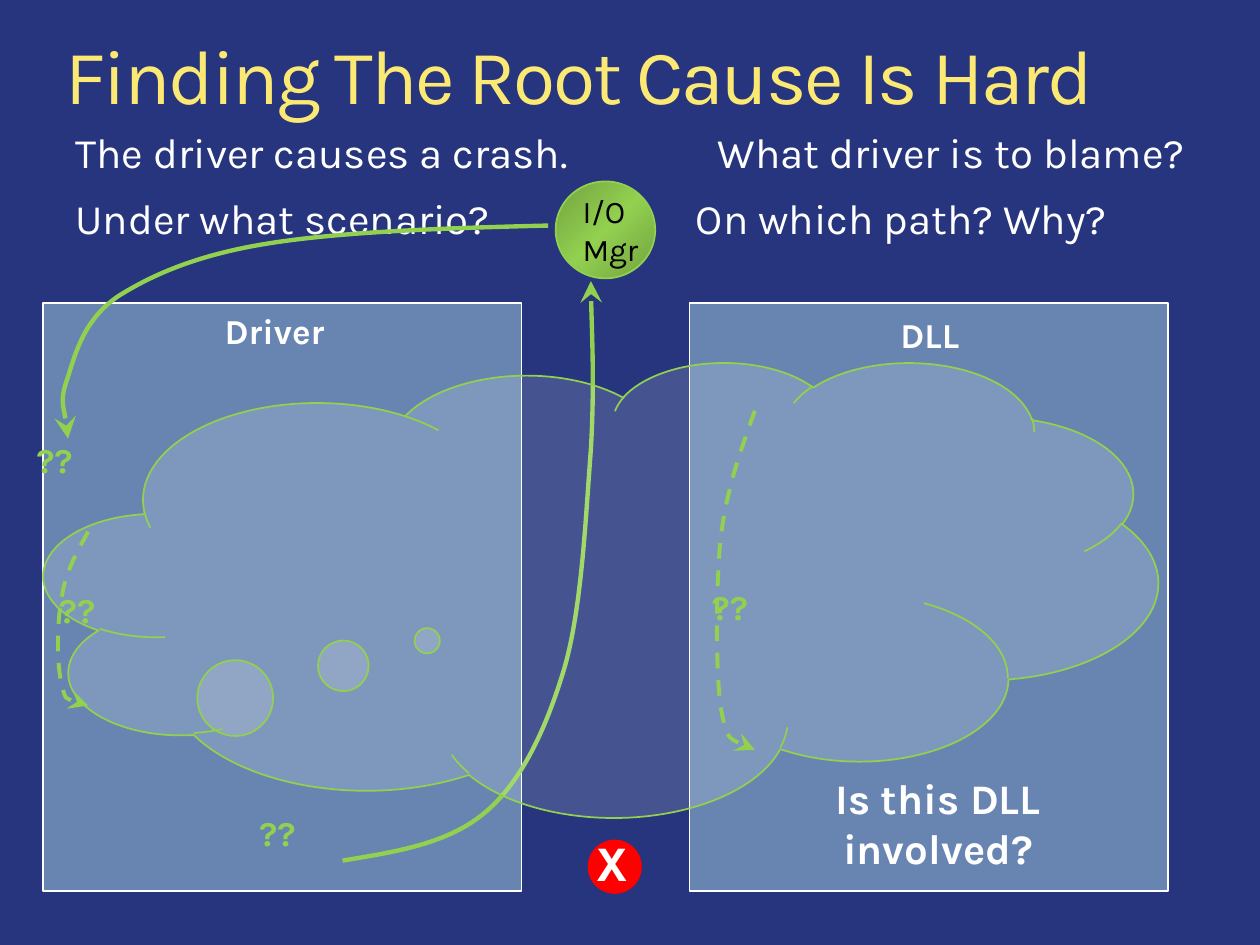
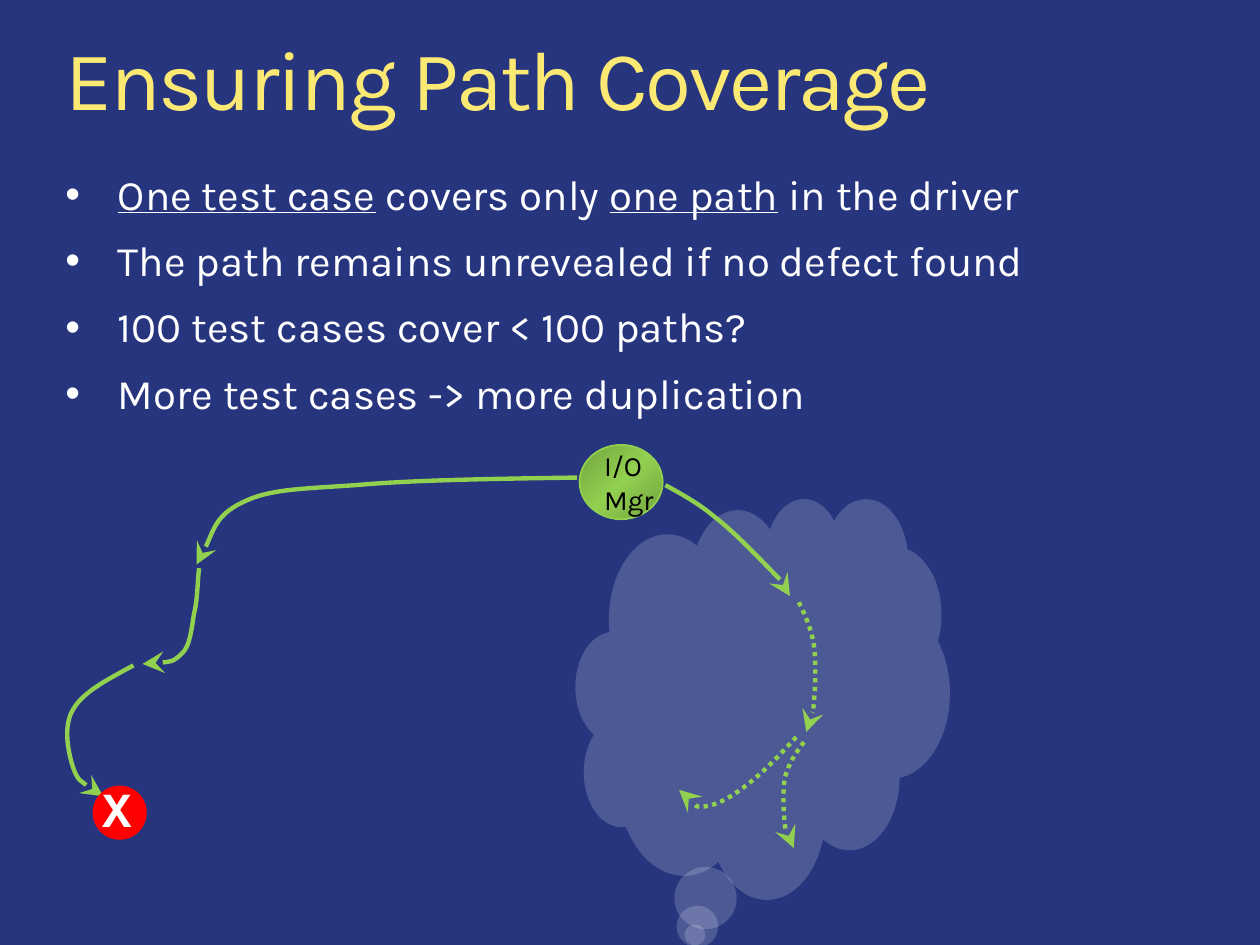
"""Build two slides on finding root causes and covering driver paths."""
from dataclasses import dataclass

from lxml.etree import SubElement
from pptx import Presentation
from pptx.dml.color import RGBColor
from pptx.enum.dml import MSO_LINE
from pptx.enum.shapes import MSO_SHAPE as SHAPE
from pptx.enum.text import MSO_ANCHOR as ANCHOR, MSO_AUTO_SIZE as AUTO, PP_ALIGN as ALIGN
from pptx.oxml.ns import qn
from pptx.util import Pt


@dataclass(frozen=True)
class Theme:
    """Colours, fonts and type sizes."""
    navy: str = "26357E"
    yellow: str = "FCE974"
    white: str = "FFFFFF"
    black: str = "000000"
    green: str = "92D050"
    moss: str = "72A23E"
    ice: str = "CCFFFF"
    red: str = "FF0000"
    font: str = "Karla"
    mono: str = "Courier New"
    body: int = 24
    label: int = 20
    mark: int = 28


T = Theme()
SLIDE_W, SLIDE_H = 720, 540
INDENT = 30
ONE_BODY, TWO_BODIES = 1, 3

CAUSE = dict(
    title="Finding The Root Cause Is Hard", title_size=44, title_h=48,
    body_boxes=[(36, 72, 354, 65), (390.5, 72, 305.5, 65)],
    bodies=[[("The driver causes a crash.", 0), ("Under what scenario?", 0)],
            [("What driver is to blame?", 12.5), ("On which path? Why?", 0)]],
    panels=[(24.5, 173), (394, 173)], panel_size=(273.6, 336),
    labels=[("DLL", (432.7, 175.7, 197.3, 31), T.label),
            ("Driver", (84.2, 173.5, 145.4, 31), T.label),
            ("Is this DLL involved?", (420, 437.8, 232, 66), T.body)],
    doubts=[(141, 460), (13.7, 247), (399.6, 331.2), (26.6, 332.6)],
    manager=((317.5, 103.7, 56.9, 55.4), 18),
    crash=(336.2, 480.2),
    cloud=((25.2, 206.6, 636.5, 259.9), (-0.156, 0.114), 15),
)
CALL_PATHS = [
    [(313.2, 128.9), (254.2, 130.3), (195.1, 132.5), (154.1, 139), (113, 145.4),
     (87.1, 157), (67.7, 169.2), (48.2, 182.2), (43.2, 201.6), (38.9, 215.3),
     (33.8, 229), (38.9, 244.8), (38.9, 250.6)],
    [(195.8, 491.8), (226.1, 486.7), (256.3, 482.4), (277.9, 463.7), (298.8, 445.7),
     (312.5, 415.4), (322.6, 381.6), (332.6, 347), (334.8, 293.8), (337.7, 257),
     (339.8, 220.3), (337.7, 176.4), (337.7, 160.6)],
]
HIDDEN_PATHS = [
    [(431.3, 234.7), (423.4, 257), (415.4, 278.6), (411.8, 307.4), (409, 335.5),
     (409, 383.8), (411.8, 403.9), (415.4, 424.1), (423.4, 426.2), (431.3, 428.4)],
    [(50.4, 303.8), (43.9, 315.4), (37.4, 326.9), (35.3, 341.3), (32.4, 355.7),
     (32.4, 380.9), (35.3, 391), (37.4, 401), (43.9, 402.5), (50.4, 403.2)],
]

COVERAGE = dict(
    title="Ensuring Path Coverage", title_size=48, title_h=52.6,
    body_boxes=[(30.2, 95.8, 660, 148)],
    body=[[("One test case", True), (" covers only ", False),
           ("one path", True), (" in the driver", False)],
          [("The path remains unrevealed if no defect found", False)],
          [("100 test cases cover < 100 paths?", False)],
          [("More test cases -> more duplication", False)]],
    manager=((331.2, 254.2, 47.5, 42.5), 16),
    crash=(53.3, 449.3),
    cloud=((329, 284.4, 213.8, 229), (-0.181, 0.591), 18),
)
TESTED_PATHS = [
    [(329.8, 272.9), (283, 273.6), (236.2, 274.3), (203.8, 277.2), (172.1, 279.4),
     (153.4, 279.4), (138.2, 287.3), (123.1, 294.5), (116.6, 316.8), (112.3, 322.6)],
    [(113.8, 324.7), (113, 329), (113, 342.7), (110.9, 350.6), (109.4, 359.3),
     (108.7, 369.4), (103.7, 373.7), (98.6, 378.7), (90, 379.4), (81.4, 379.4)],
    [(76.3, 380.2), (61.9, 388.1), (47.5, 395.3), (41.8, 405.4), (36, 414.7),
     (38.9, 429.8), (41.8, 438.5), (44.6, 446.4), (51.8, 450.7), (59, 455)],
    [(380.2, 277.2), (385.2, 280.1), (398.2, 286.6), (409, 295.9), (420.5, 304.6),
     (439.2, 324.7), (446.4, 331.9), (453.6, 339.8), (450.7, 338.4), (451.4, 340.6)],
]
MISSED_PATHS = [
    [(456.5, 344.2), (460.1, 351.4), (463.7, 359.3), (465.1, 368.6), (466.6, 378.7),
     (465.8, 393.8), (465.1, 401.8), (464.4, 410.4), (462.2, 414.7), (460.8, 418.3)],
    [(459.4, 424.1), (455, 429.8), (450.7, 436.3), (448.6, 444.2), (447.1, 452.2),
     (447.8, 465.1), (448.6, 471.6), (449.3, 477.4), (451.4, 481), (453.6, 484.6)],
    [(455, 421.2), (445.7, 431.3), (436.3, 441.4), (427.7, 447.8), (419, 455),
     (409.7, 460.1), (403.2, 460.8), (396.7, 461.5), (392.4, 456.5), (388.1, 451.4)],
]


def rgb(color):
    return RGBColor.from_string(color)


def add_run(p, text, size, color=T.white, font=T.font, bold=False, underline=None):
    r = p.add_run()
    r.text = text
    f = r.font
    f.size, f.name, f.bold, f.underline = Pt(size), font, bold, underline
    f.color.rgb = rgb(color)
    return r


def place(sp, box):
    sp.left, sp.top, sp.width, sp.height = map(Pt, box)


def add_shape(slide, kind, box, fill, line=None, width=1, opacity=100):
    sp = slide.shapes.add_shape(kind, *map(Pt, box))
    sp.shadow.inherit = False
    sp.fill.solid()
    sp.fill.fore_color.rgb = rgb(fill)
    if opacity < 100:
        clr = sp._element.spPr.find(qn("a:solidFill"))[0]
        SubElement(clr, qn("a:alpha"), val=str(opacity * 1000))
    if line:
        sp.line.color.rgb = rgb(line)
        sp.line.width = Pt(width)
    else:
        sp.line.fill.background()
    return sp


def add_label(slide, text, box, size, color=T.white, font=T.font, align=None, wrap=True):
    tf = slide.shapes.add_textbox(*map(Pt, box)).text_frame
    tf.word_wrap = wrap
    tf.auto_size = AUTO.SHAPE_TO_FIT_TEXT
    p = tf.paragraphs[0]
    p.alignment = align
    add_run(p, text, size, color, font, bold=True)


def add_curve(slide, points, width=2.5, dash=None):
    start, *rest = [(Pt(x), Pt(y)) for x, y in points]
    builder = slide.shapes.build_freeform(*start)
    builder.add_line_segments(rest, close=False)
    sp = builder.convert_to_shape()
    sp.shadow.inherit = False
    sp.fill.background()
    sp.line.color.rgb = rgb(T.green)
    sp.line.width = Pt(width)
    if dash:
        sp.line.dash_style = dash
    spPr = sp._element.spPr
    SubElement(spPr.find(qn("a:ln")), qn("a:tailEnd"), type="stealth", w="lg", len="lg")
    outline = next(spPr.iter(qn("a:path")))
    steps = outline.findall(qn("a:lnTo"))
    for i in range(0, len(steps), 3):
        bezier = SubElement(outline, qn("a:cubicBezTo"))
        for step in steps[i:i + 3]:
            bezier.append(step[0])
            outline.remove(step)


def add_crash(slide, corner):
    x, y = corner
    add_shape(slide, SHAPE.OVAL, (x, y, 30.2, 30.2), T.red, T.red, 0.75)
    add_label(slide, "X", (x - 2, y - 8, 31.7, 41), T.mark, font=T.mono, wrap=False)


def add_manager(slide, box, size):
    sp = add_shape(slide, SHAPE.OVAL, box, T.green, T.green)
    sp.fill.gradient()
    sp.fill.gradient_angle = 315
    stops = next(sp._element.spPr.iter(qn("a:gsLst")))
    for stop in list(stops):
        stops.remove(stop)
    for pos, color in ((0, T.moss), (50, T.green), (100, T.moss)):
        stop = SubElement(stops, qn("a:gs"), pos=str(pos * 1000))
        SubElement(stop, qn("a:srgbClr"), val=color)
    tf = sp.text_frame
    tf.word_wrap = False
    tf.vertical_anchor = ANCHOR.MIDDLE
    for i, word in enumerate(("I/O", "Mgr")):
        p = tf.add_paragraph() if i else tf.paragraphs[0]
        p.alignment = ALIGN.LEFT
        add_run(p, word, size, T.black)


def add_cloud(slide, box, tail, opacity, line=None):
    sp = add_shape(slide, SHAPE.CLOUD_CALLOUT, box, T.white, line, opacity=opacity)
    sp.adjustments[0], sp.adjustments[1] = tail


def start_slide(prs, data, layout):
    """Add a slide with its title and return it with its empty body frames."""
    slide = prs.slides.add_slide(prs.slide_layouts[layout])
    title, *bodies = slide.placeholders
    place(title, (30.2, 18, 660, data["title_h"]))
    for body, box in zip(bodies, data["body_boxes"]):
        place(body, box)
    for sp in (title, *bodies):
        tf = sp.text_frame
        tf.vertical_anchor = ANCHOR.TOP
        tf.auto_size = AUTO.NONE
        tf.word_wrap = True
    p = title.text_frame.paragraphs[0]
    p.alignment = ALIGN.LEFT
    p.line_spacing = 0.9
    r = add_run(p, data["title"], data["title_size"], T.yellow)
    r._r.get_or_add_rPr().set("spc", "-125")
    return slide, [body.text_frame for body in bodies]


def body_paragraph(tf, i, margin, bullet=None):
    p = tf.add_paragraph() if i else tf.paragraphs[0]
    p.line_spacing = 0.9
    p.space_before = Pt(12 if i else 0)
    pPr = p._p.get_or_add_pPr()
    pPr.set("marL", str(Pt(margin)))
    pPr.set("indent", str(-Pt(margin) if bullet else 0))
    if bullet:
        SubElement(SubElement(pPr, qn("a:buClr")), qn("a:srgbClr"), val=T.white)
        SubElement(pPr, qn("a:buChar"), char=bullet)
    else:
        SubElement(pPr, qn("a:buNone"))
    return p


def build_cause(prs):
    d = CAUSE
    slide, frames = start_slide(prs, d, TWO_BODIES)
    for tf, lines in zip(frames, d["bodies"]):
        for i, (text, margin) in enumerate(lines):
            add_run(body_paragraph(tf, i, margin), text, T.body)
    for corner in d["panels"]:
        add_shape(slide, SHAPE.RECTANGLE, corner + d["panel_size"], T.ice, T.white, opacity=40)
    add_crash(slide, d["crash"])
    add_manager(slide, *d["manager"])
    for points in CALL_PATHS:
        add_curve(slide, points)
    add_cloud(slide, *d["cloud"], line=T.green)
    for points in HIDDEN_PATHS:
        add_curve(slide, points, 2.25, MSO_LINE.DASH)
    for text, box, size in d["labels"]:
        add_label(slide, text, box, size, align=ALIGN.CENTER)
    for corner in d["doubts"]:
        add_label(slide, "??", corner + (63.4, 31), T.label, T.green)


def build_coverage(prs):
    d = COVERAGE
    slide, (tf,) = start_slide(prs, d, ONE_BODY)
    for i, parts in enumerate(d["body"]):
        p = body_paragraph(tf, i, INDENT, bullet="•")
        for text, underline in parts:
            add_run(p, text, T.body, underline=underline)
    add_cloud(slide, *d["cloud"])
    for points in TESTED_PATHS:
        add_curve(slide, points)
    for points in MISSED_PATHS:
        add_curve(slide, points, dash=MSO_LINE.ROUND_DOT)
    add_crash(slide, d["crash"])
    add_manager(slide, *d["manager"])


def main():
    prs = Presentation()
    prs.slide_width, prs.slide_height = Pt(SLIDE_W), Pt(SLIDE_H)
    fill = prs.slide_master.background.fill
    fill.solid()
    fill.fore_color.rgb = rgb(T.navy)
    build_cause(prs)
    build_coverage(prs)
    prs.save("out.pptx")


if __name__ == "__main__":
    main()
